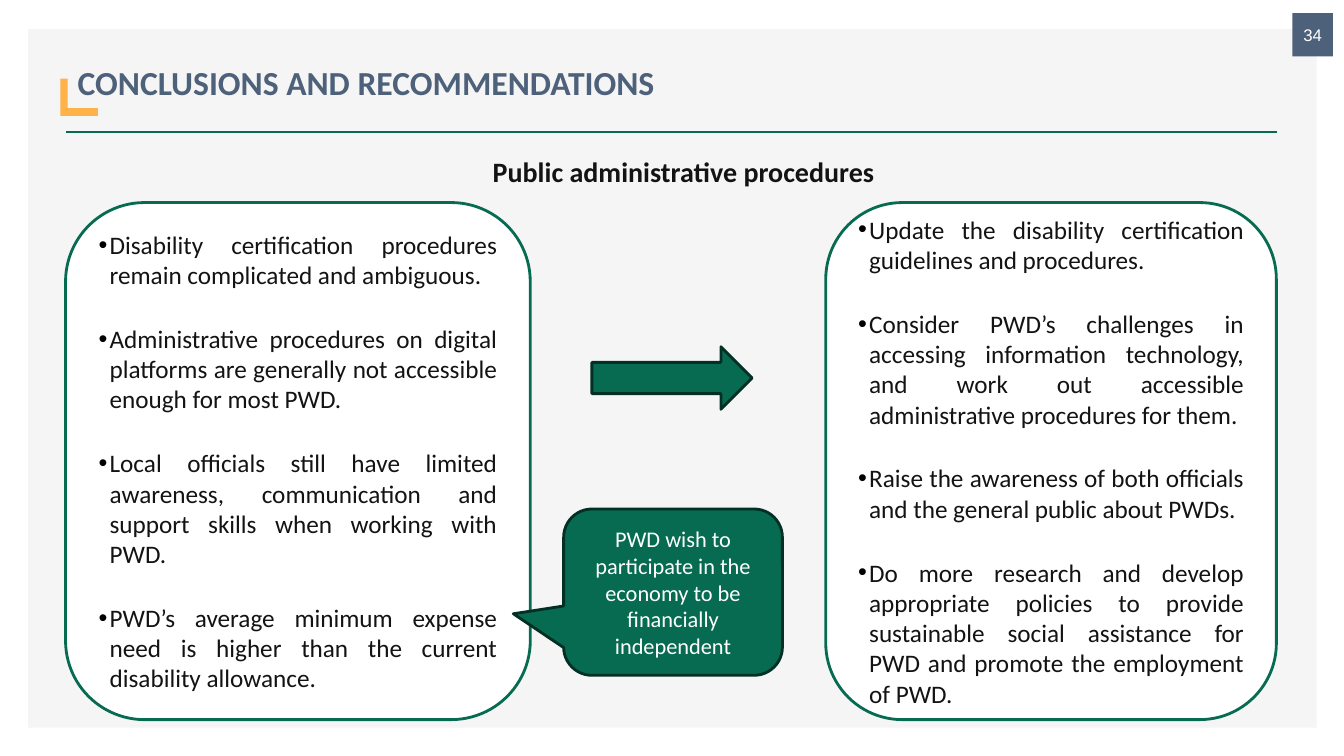
import dataclasses
import pptx
import pptx.util
import pptx.dml.color
import pptx.enum.shapes
import pptx.enum.text
import pptx.oxml
import pptx.oxml.ns
import pptx.shapes.autoshape
import pptx.text.text

RGB = pptx.dml.color.RGBColor
KIND = pptx.enum.shapes.MSO_SHAPE
ALIGN = pptx.enum.text.PP_ALIGN
ANCHOR = pptx.enum.text.MSO_ANCHOR
FIT = pptx.enum.text.MSO_AUTO_SIZE

WHITE = RGB(0xFF, 0xFF, 0xFF)
PAPER = RGB(0xF5, 0xF5, 0xF5)
GREEN = RGB(0x07, 0x6B, 0x51)
DARK = RGB(0x03, 0x2F, 0x24)
AMBER = RGB(0xFD, 0xB3, 0x47)
SLATE = RGB(0x4E, 0x61, 0x7A)
INK = RGB(0x13, 0x13, 0x13)

WIDE = pptx.util.Inches(13.33)
HIGH = pptx.util.Inches(7.5)
HANG = pptx.util.Inches(0.11)


@dataclasses.dataclass(frozen=True)
class Box:
    """A place on a grid of 100 columns by 100 rows."""
    col: float
    row: float
    cols: float
    rows: float

    def frame(self) -> tuple[int, int, int, int]:
        return (int(self.col * WIDE / 100), int(self.row * HIGH / 100),
                int(self.cols * WIDE / 100), int(self.rows * HIGH / 100))


@dataclasses.dataclass(frozen=True)
class Style:
    size: int
    color: RGB
    align: ALIGN = ALIGN.CENTER
    bold: bool = False
    font: str = "Calibri"


@dataclasses.dataclass(frozen=True)
class Form:
    kind: KIND
    box: Box
    fill: RGB
    line: RGB | None = None
    adjust: tuple[float, ...] = ()


@dataclasses.dataclass(frozen=True)
class Card:
    col: float
    cols: float
    points: tuple[str, ...]


PANEL = Form(KIND.RECTANGLE, Box(2.1, 3.87, 95.87, 92.4), PAPER)
CORNER = Form(KIND.RECTANGLE, Box(4.5, 10.4, 2.78, 4.93), AMBER)
BADGE = Form(KIND.RECTANGLE, Box(96.17, 1.73, 3, 5.73), SLATE)
ARROW = Form(KIND.RIGHT_ARROW, Box(44.04, 45.87, 11.93, 8.27), GREEN, DARK)
BUBBLE = Form(KIND.ROUNDED_RECTANGULAR_CALLOUT, Box(41.94, 67.33, 16.28, 22),
              GREEN, DARK, (-0.73, 0.13, 0.17))
RULE = Box(4.95, 17.47, 90.1, 0)
TITLE = Box(5.03, 4.8, 89.95, 9.47)
TOPIC = Box(34.96, 19.73, 31.81, 5.87)

POINT = Style(18, INK, ALIGN.JUSTIFY)
CARDS = (
    Card(4.88, 34.58, (
        "Disability certification procedures remain complicated and ambiguous.",
        "Administrative procedures on digital platforms are generally not "
        "accessible enough for most PWD.",
        "Local officials still have limited awareness, communication and "
        "support skills when working with PWD.",
        "PWD’s average minimum expense need is higher than the current "
        "disability allowance.")),
    Card(61.44, 33.53, (
        "Update the disability certification guidelines and procedures.",
        "Consider PWD’s challenges in accessing information technology, and "
        "work out accessible administrative procedures for them.",
        "Raise the awareness of both officials and the general public about "
        "PWDs.",
        "Do more research and develop appropriate policies to provide "
        "sustainable social assistance for PWD and promote the employment "
        "of PWD.")),
)


def draw(slide, form: Form) -> pptx.shapes.autoshape.Shape:
    shape = slide.shapes.add_shape(form.kind, *form.box.frame())
    shape.shadow.inherit = False
    shape.fill.solid()
    shape.fill.fore_color.rgb = form.fill
    if form.line is None:
        shape.line.fill.background()
    else:
        shape.line.color.rgb = form.line
        shape.line.width = pptx.util.Pt(2)
    for index, value in enumerate(form.adjust):
        shape.adjustments[index] = value
    return shape


def write(shape, text: str, style: Style) -> None:
    """Set the text, one paragraph a line, and format every run."""
    frame = shape.text_frame
    frame.text = text
    frame.word_wrap = True
    frame.auto_size = FIT.NONE
    frame.vertical_anchor = ANCHOR.MIDDLE
    for para in frame.paragraphs:
        para.alignment = style.align
        for run in para.runs:
            run.font.name = style.font
            run.font.size = pptx.util.Pt(style.size)
            run.font.bold = style.bold
            run.font.color.rgb = style.color


def bullet(para: pptx.text.text._Paragraph) -> None:
    props = para._p.get_or_add_pPr()
    props.set("marL", str(HANG))
    props.set("indent", str(-HANG))
    space = pptx.oxml.ns.nsdecls("a")
    for part in ('buClr {}><a:srgbClr val="000000"/></a:buClr>',
                 'buFont {} typeface="Arial"/>',
                 'buChar {} char="•"/>'):
        props.append(pptx.oxml.parse_xml("<a:" + part.format(space)))


def draw_card(slide, card: Card) -> None:
    box = Box(card.col, 26.8, card.cols, 68.4)
    shape = draw(slide, Form(KIND.ROUNDED_RECTANGLE, box, WHITE, GREEN, (0.17,)))
    write(shape, "\n".join(card.points), POINT)
    for index, para in enumerate(shape.text_frame.paragraphs):
        bullet(para)
        para.space_before = pptx.util.Pt(24 if index else 0)


def draw_rule(slide) -> None:
    left, top, width, _ = RULE.frame()
    rule = slide.shapes.add_connector(
        pptx.enum.shapes.MSO_CONNECTOR.STRAIGHT, left, top, left + width, top)
    rule.line.color.rgb = GREEN
    rule.line.width = pptx.util.Pt(2)
    rule._element.spPr.append(pptx.oxml.parse_xml(
        "<a:effectLst %s/>" % pptx.oxml.ns.nsdecls("a")))


def draw_title(slide) -> None:
    """Place the title in front of all that is drawn so far."""
    title = slide.shapes.title
    title.element.getparent().append(title.element)
    title.left, title.top, title.width, title.height = TITLE.frame()
    title.fill.solid()
    title.fill.fore_color.rgb = PAPER
    write(title, "CONCLUSIONS AND RECOMMENDATIONS",
          Style(24, SLATE, ALIGN.LEFT, bold=True))
    title.text_frame.paragraphs[0].line_spacing = 1.5


def main() -> None:
    deck = pptx.Presentation()
    deck.slide_width, deck.slide_height = WIDE, HIGH
    slide = deck.slides.add_slide(deck.slide_layouts[5])
    draw(slide, PANEL)
    draw_rule(slide)
    draw(slide, CORNER)
    write(draw(slide, BADGE), "34", Style(12, WHITE, font="Arial"))
    draw_title(slide)
    topic = slide.shapes.add_textbox(*TOPIC.frame())
    write(topic, "Public administrative procedures", Style(20, INK, bold=True))
    left, right = CARDS
    draw_card(slide, left)
    write(draw(slide, BUBBLE), "PWD wish to participate in the economy to be "
          "financially independent", Style(16, WHITE))
    draw(slide, ARROW)
    draw_card(slide, right)
    deck.save("out.pptx")


if __name__ == "__main__":
    main()
